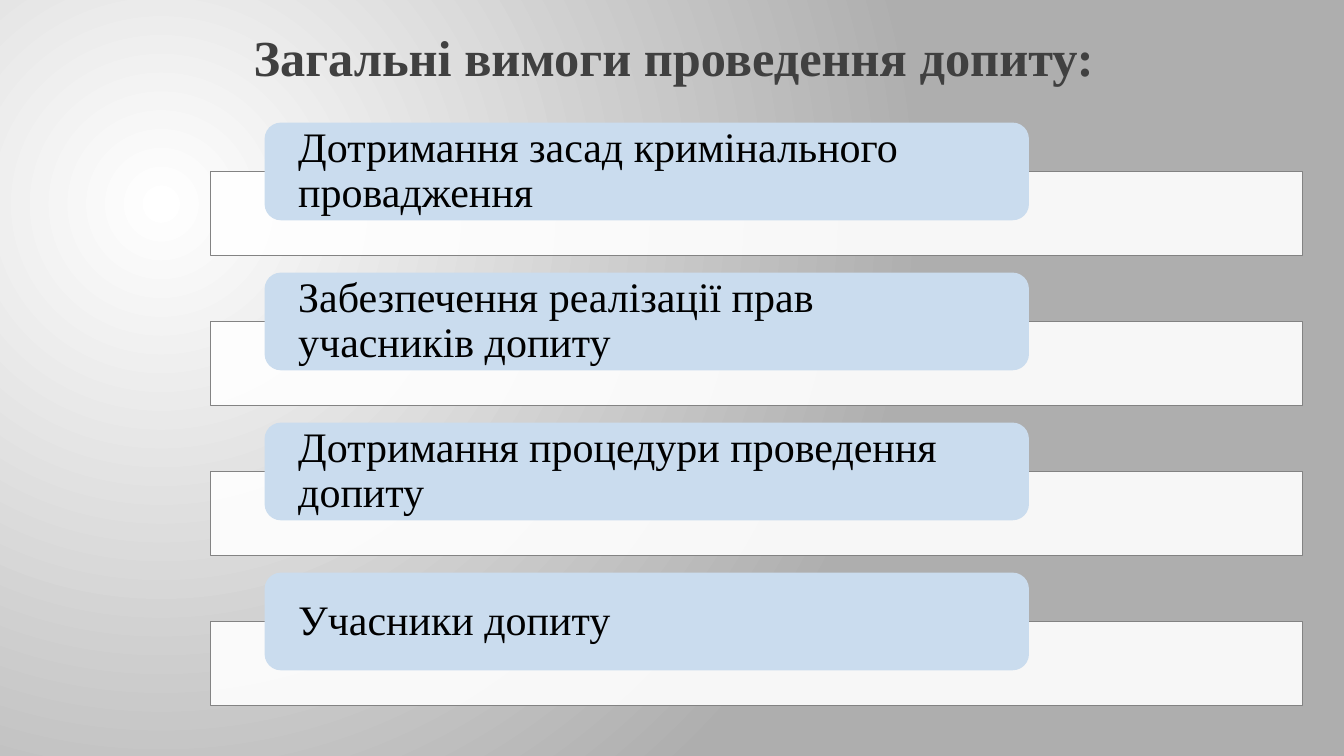
from lxml import etree
from pptx import Presentation
from pptx.dml.color import RGBColor
from pptx.enum.shapes import MSO_SHAPE
from pptx.enum.text import MSO_ANCHOR, PP_ALIGN
from pptx.oxml.ns import qn
from pptx.util import Pt

RECT, ROUNDED = MSO_SHAPE.RECTANGLE, MSO_SHAPE.ROUNDED_RECTANGLE
MIDDLE, LEFT, CENTER = MSO_ANCHOR.MIDDLE, PP_ALIGN.LEFT, PP_ALIGN.CENTER

TITLE = "Загальні вимоги проведення допиту:"
REQUIREMENTS = [
    "Дотримання засад кримінального провадження",
    "Забезпечення реалізації прав учасників допиту",
    "Дотримання процедури проведення допиту",
    "Учасники допиту",
]

THEME = {
    "font": "Times New Roman",
    "title_size": 36,
    "label_size": 30,
    "title": RGBColor(0x40, 0x40, 0x40),
    "text": RGBColor(0, 0, 0),
    "bar": RGBColor(0xFF, 0xFF, 0xFF),
    "bar_line": RGBColor(0x83, 0x83, 0x83),
    "label": RGBColor(0xCA, 0xDC, 0xEE),
    "glow": [RGBColor(0xFF, 0xFF, 0xFF), RGBColor(0xAE, 0xAE, 0xAE)],
}

BAR_LEFT, BAR_WIDTH, BAR_HEIGHT = 150, 780, 59.6
LABEL_LEFT = BAR_LEFT + 0.05 * BAR_WIDTH
LABEL_WIDTH = 0.7 * BAR_WIDTH
LABEL_HEIGHT = 69.8
FIRST_TOP, PITCH = 87.6, 107.15
LABEL_INSET = 20.6


def paint_background(s):
    fill = s.background.fill
    fill.gradient()
    for stop, color in zip(fill.gradient_stops, THEME["glow"]):
        stop.color.rgb = color
    grad = s.element.find(".//" + qn("a:gradFill"))
    grad.remove(grad.find(qn("a:lin")))
    circle = etree.SubElement(grad, qn("a:path"), {"path": "circle"})
    etree.SubElement(circle, qn("a:fillToRect"),
                     {"l": "50000", "t": "55000", "r": "125000", "b": "100000"})


def add_block(s, kind, left, top, width, height, color):
    sp = s.shapes.add_shape(kind, Pt(left), Pt(top), Pt(width), Pt(height))
    sp.shadow.inherit = False
    sp.fill.solid()
    sp.fill.fore_color.rgb = color
    sp.line.fill.background()
    return sp


def write(tf, text, size, color, align, bold=False):
    tf.word_wrap = True
    p = tf.paragraphs[0]
    p.alignment = align
    p.line_spacing = 0.9
    r = p.add_run()
    r.text = text
    r.font.name = THEME["font"]
    r.font.size = Pt(size)
    r.font.bold = bold
    r.font.color.rgb = color
    return p


def add_requirement(s, text, top):
    bar = add_block(s, RECT, BAR_LEFT, top + LABEL_HEIGHT / 2,
                    BAR_WIDTH, BAR_HEIGHT, THEME["bar"])
    bar.line.color.rgb = THEME["bar_line"]
    bar.line.width = Pt(0.5)
    white = bar.fill._xPr.find(qn("a:solidFill"))[0]
    etree.SubElement(white, qn("a:alpha"), {"val": "90000"})

    label = add_block(s, ROUNDED, LABEL_LEFT, top,
                      LABEL_WIDTH, LABEL_HEIGHT, THEME["label"])
    tf = label.text_frame
    tf.margin_left = tf.margin_right = Pt(LABEL_INSET)
    tf.margin_top = tf.margin_bottom = 0
    tf.vertical_anchor = MIDDLE
    write(tf, text, THEME["label_size"], THEME["text"], LEFT)


def main():
    prs = Presentation()
    prs.slide_width, prs.slide_height = Pt(960), Pt(540)
    s = prs.slides.add_slide(prs.slide_layouts[6])
    paint_background(s)

    title = s.shapes.add_textbox(Pt(126), Pt(20.2), Pt(710.6), Pt(48.2))
    p = write(title.text_frame, TITLE, THEME["title_size"], THEME["title"], CENTER, True)
    p.space_before = Pt(10)

    for i, text in enumerate(REQUIREMENTS):
        add_requirement(s, text, FIRST_TOP + i * PITCH)

    prs.save("out.pptx")


if __name__ == "__main__":
    main()
